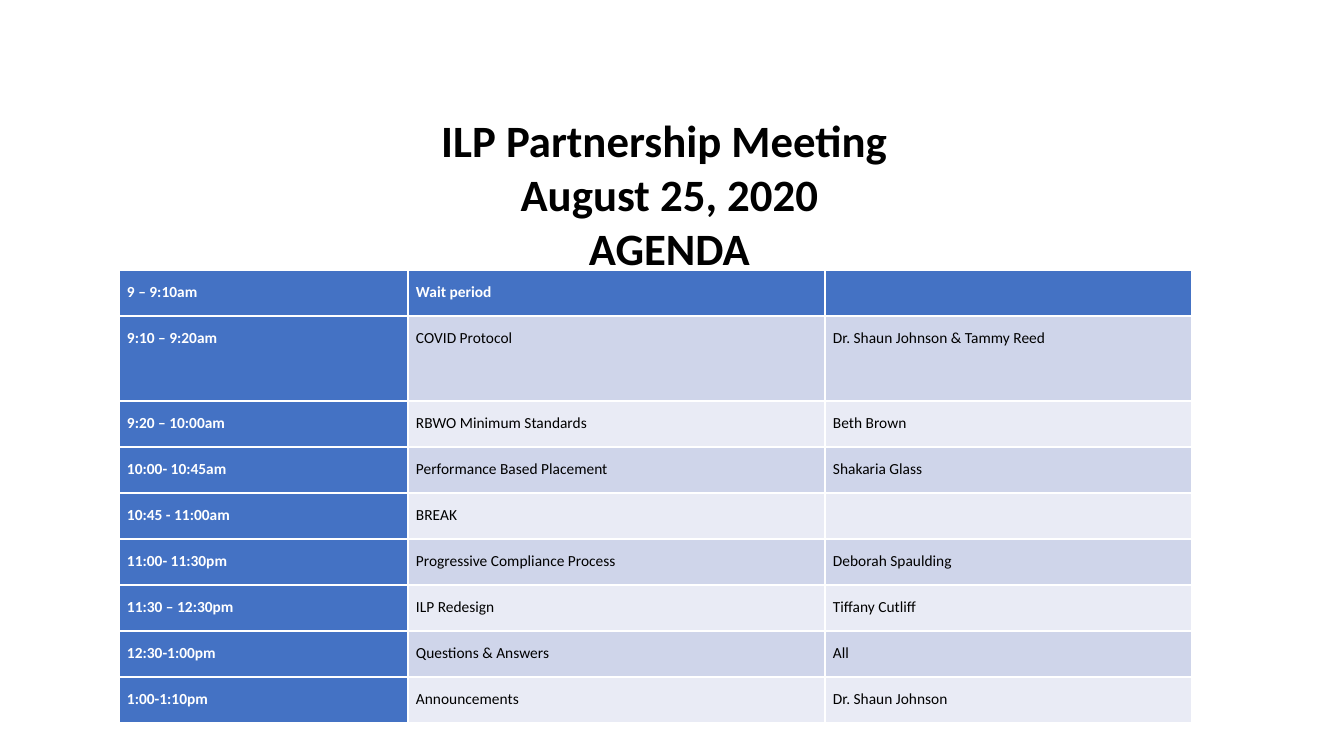
from pptx import Presentation
from pptx.dml.color import RGBColor
from pptx.enum.text import MSO_ANCHOR, MSO_AUTO_SIZE, PP_ALIGN as Align
from pptx.util import Emu, Pt

EMU_PER_PX = 914400 / 100.8
COLORS = {
    "heading": "000000",
    "topic": "000000",
    "time": "FFFFFF",
    "accent": "4472C4",
    "band_dark": "CFD5EA",
    "band_light": "E9EBF5",
}
TITLE_LINES = [["ILP Partnership Meeting ", "August 25, 2020"], ["AGENDA"]]
AGENDA = [
    ("9 – 9:10am", "Wait period", ""),
    ("9:10 – 9:20am", "COVID Protocol", "Dr. Shaun Johnson & Tammy Reed"),
    ("9:20 – 10:00am", "RBWO Minimum Standards", "Beth Brown"),
    ("10:00- 10:45am", "Performance Based Placement", "Shakaria Glass"),
    ("10:45 - 11:00am", "BREAK", ""),
    ("11:00- 11:30pm", "Progressive Compliance Process", "Deborah Spaulding"),
    ("11:30 – 12:30pm", "ILP Redesign", "Tiffany Cutliff"),
    ("12:30-1:00pm", "Questions & Answers", "All"),
    ("1:00-1:10pm", "Announcements", "Dr. Shaun Johnson"),
]
COLUMN_WIDTHS = [289, 417, 367]
ROW_HEIGHT, COVID_ROW, COVID_HEIGHT = 46, 1, 85


def px(length):
    return Emu(round(length * EMU_PER_PX))


def color(name):
    return RGBColor.from_string(COLORS[name])


class AgendaSlide:
    font_name = "Calibri"

    def __init__(self, deck):
        self.slide = deck.slides.add_slide(deck.slide_layouts[5])

    def add_run(self, paragraph, text, size, color_name, bold):
        run = paragraph.add_run()
        run.text = text
        run.font.name = self.font_name
        run.font.size = Pt(size)
        run.font.bold = bold
        run.font.color.rgb = color(color_name)

    def title(self, paragraphs, left, top, width, height):
        heading = self.slide.shapes.title
        heading.left, heading.top = px(left), px(top)
        heading.width, heading.height = px(width), px(height)
        frame = heading.text_frame
        frame.word_wrap = True
        frame.auto_size = MSO_AUTO_SIZE.SHAPE_TO_FIT_TEXT
        frame.vertical_anchor = MSO_ANCHOR.TOP
        for index, lines in enumerate(paragraphs):
            paragraph = frame.add_paragraph() if index else frame.paragraphs[0]
            paragraph.alignment = Align.CENTER
            for number, line in enumerate(lines):
                if number:
                    paragraph.add_line_break()
                self.add_run(paragraph, line, 32, "heading", True)

    def agenda(self, rows, left, top, widths, heights):
        schedule = self.slide.shapes.add_table(
            len(rows), len(widths), px(left), px(top),
            px(sum(widths)), px(sum(heights))).table
        schedule.first_col = True
        for column, width in zip(schedule.columns, widths):
            column.width = px(width)
        for row_index, (entries, height) in enumerate(zip(rows, heights)):
            schedule.rows[row_index].height = px(height)
            for column_index, entry in enumerate(entries):
                self.agenda_cell(schedule, row_index, column_index, entry)

    def agenda_cell(self, schedule, row, column, entry):
        cell = schedule.cell(row, column)
        emphasized = row == 0 or column == 0
        band = "band_dark" if row % 2 else "band_light"
        cell.fill.solid()
        cell.fill.fore_color.rgb = color("accent" if emphasized else band)
        if not entry:
            return
        cell.margin_left = cell.margin_right = px(8)
        cell.margin_top = cell.margin_bottom = px(10)
        paragraph = cell.text_frame.paragraphs[0]
        paragraph.line_spacing = 1.15
        if column == 2:
            paragraph.alignment = Align.JUSTIFY
        else:
            paragraph.space_after = Pt(10)
        self.add_run(paragraph, entry, 11,
                     "time" if emphasized else "topic", emphasized)


def main():
    deck = Presentation()
    deck.slide_width, deck.slide_height = px(1344), px(756)
    page = AgendaSlide(deck)
    page.title(TITLE_LINES, 184, 108, 971, 173)
    heights = [COVID_HEIGHT if row == COVID_ROW else ROW_HEIGHT
               for row in range(len(AGENDA))]
    page.agenda(AGENDA, 119, 270, COLUMN_WIDTHS, heights)
    deck.save("out.pptx")


if __name__ == "__main__":
    main()
